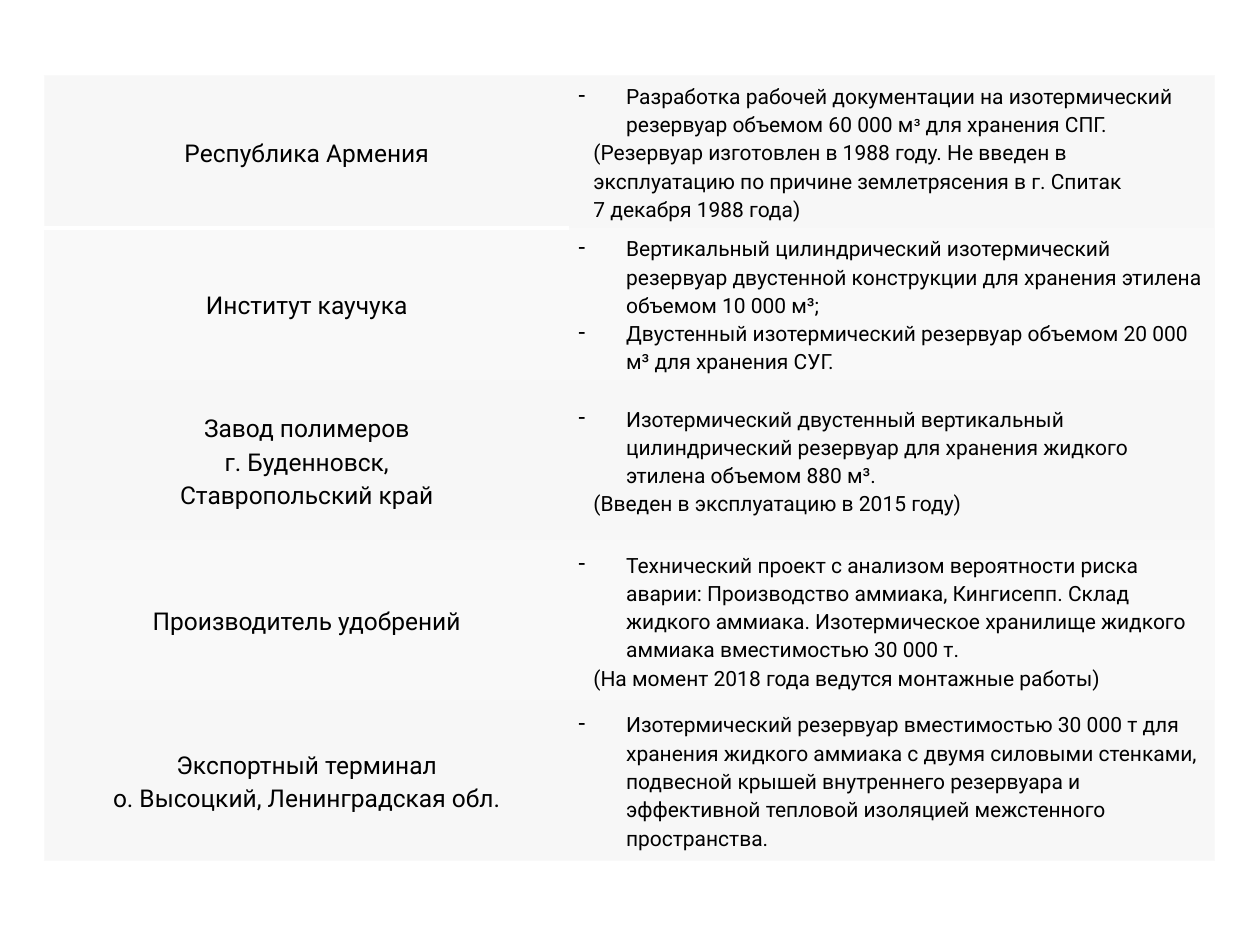
from lxml import etree
from pptx import Presentation
from pptx.dml.color import RGBColor
from pptx.enum import text
from pptx.oxml import ns
from pptx.util import Inches, Pt

COLORS = {"text": "000000", "odd": "F7F7F7", "even": "F9F9F9", "edge": "F9F9F9", "rule": "FFFFFF"}
COLUMN_WIDTHS = [4.17, 5.12]
ROW_HEIGHTS = [1.21, 1.21, 1.27, 1.27, 1.27]

PROJECTS = [
    (["Республика Армения"],
     [("item", ["Разработка рабочей документации на изотермический резервуар объемом 60 000 м",
                "³", " для хранения СПГ."]),
      ("note", ["(Резервуар изготовлен в 1988 году. Не введен в эксплуатацию по причине "
                "землетрясения в г. Спитак"]),
      ("note", ["7 декабря 1988 года)"])]),
    (["Институт каучука"],
     [("item", ["Вертикальный цилиндрический изотермический резервуар двустенной конструкции "
                "для хранения этилена объемом 10 000 м³;"]),
      ("item", ["Двустенный изотермический резервуар объемом 20 000 м³ для хранения СУГ."])]),
    (["Завод полимеров", "г. Буденновск,", "Ставропольский край"],
     [("item", ["Изотермический двустенный вертикальный цилиндрический резервуар для хранения "
                "жидкого этилена объемом 880 м³."]),
      ("note", ["(Введен в эксплуатацию в 2015 году)"])]),
    (["Производитель удобрений"],
     [("item", ["Технический проект с анализом вероятности риска аварии: Производство аммиака, "
                "Кингисепп. Склад жидкого аммиака. Изотермическое хранилище жидкого аммиака "
                "вместимостью 30 000 т."]),
      ("note", ["(На момент 2018 года ведутся монтажные работы)"])]),
    (["Экспортный терминал", "о. Высоцкий, Ленинградская обл."],
     [("item", ["Изотермический резервуар вместимостью 30 000 т для хранения жидкого аммиака "
                "с двумя силовыми стенками, подвесной крышей внутреннего резервуара и эффективной "
                "тепловой изоляцией межстенного пространства."])]),
]


class SlideBuilder:
    font = "Roboto"
    sizes = {"customer": 14, "item": 12, "note": 12}
    indents = {"item": (0.38, -0.38), "note": (0.12, 0)}

    def __init__(self, slide):
        self.slide = slide

    def table(self, left, top, widths, heights):
        grid = self.slide.shapes.add_table(
            len(heights), len(widths), Inches(left), Inches(top),
            Inches(sum(widths)), Inches(sum(heights))).table
        grid.first_row = grid.horz_banding = False
        for column, width in zip(grid.columns, widths):
            column.width = Inches(width)
        for row, height in zip(grid.rows, heights):
            row.height = Inches(height)
        return grid

    def cell(self, cell, paragraphs, fill, borders):
        cell.vertical_anchor = text.MSO_ANCHOR.MIDDLE
        cell.margin_left = cell.margin_right = Inches(0.07)
        cell.margin_top = cell.margin_bottom = 0
        cell.fill.solid()
        cell.fill.fore_color.rgb = RGBColor.from_string(COLORS[fill])
        self.borders(cell, borders)
        frame = cell.text_frame
        for index, (role, pieces) in enumerate(paragraphs):
            paragraph = frame.paragraphs[0] if index == 0 else frame.add_paragraph()
            self.paragraph(paragraph, role, pieces)

    def paragraph(self, paragraph, role, pieces):
        if role == "customer":
            paragraph.alignment = text.PP_ALIGN.CENTER
        else:
            margin, indent = self.indents[role]
            properties = paragraph._p.get_or_add_pPr()
            properties.set("marL", str(Inches(margin)))
            properties.set("indent", str(Inches(indent)))
            if role == "item":
                etree.SubElement(properties, ns.qn("a:buChar")).set("char", "-")
        paragraph.line_spacing = 1.15
        for piece in pieces:
            run = paragraph.add_run()
            run.text = piece
            run.font.name = self.font
            run.font.size = Pt(10.5 if piece == "³" else self.sizes[role])
            run.font.color.rgb = RGBColor.from_string(COLORS["text"])

    def borders(self, cell, borders):
        properties = cell._tc.get_or_add_tcPr()
        for position, side in enumerate("LRTB"):
            line = etree.Element(ns.qn(f"a:ln{side}"))
            if side in borders:
                color, width = borders[side]
                line.set("w", str(Pt(width)))
                solid = etree.SubElement(line, ns.qn("a:solidFill"))
                etree.SubElement(solid, ns.qn("a:srgbClr")).set("val", COLORS[color])
            else:
                etree.SubElement(line, ns.qn("a:noFill"))
            properties.insert(position, line)


def main():
    deck = Presentation()
    deck.slide_width, deck.slide_height = Inches(10), Inches(7.5)
    builder = SlideBuilder(deck.slides.add_slide(deck.slide_layouts[6]))
    projects = builder.table(0.35, 0.6, COLUMN_WIDTHS, ROW_HEIGHTS)
    edge = ("edge", 0.75)
    last = len(PROJECTS) - 1
    for row, (customer, works) in enumerate(PROJECTS):
        fill = "even" if row % 2 else "odd"
        outer = {"T": edge} if row == 0 else {"B": edge} if row == last else {}
        customer_borders = {"L": edge, **outer}
        if row == 0:
            customer_borders["B"] = ("rule", 3)
        elif row == 1:
            customer_borders["T"] = ("rule", 3)
        builder.cell(projects.cell(row, 0), [("customer", [line]) for line in customer],
                     fill, customer_borders)
        builder.cell(projects.cell(row, 1), works, fill, {"R": edge, **outer})
    deck.save("out.pptx")


if __name__ == "__main__":
    main()
